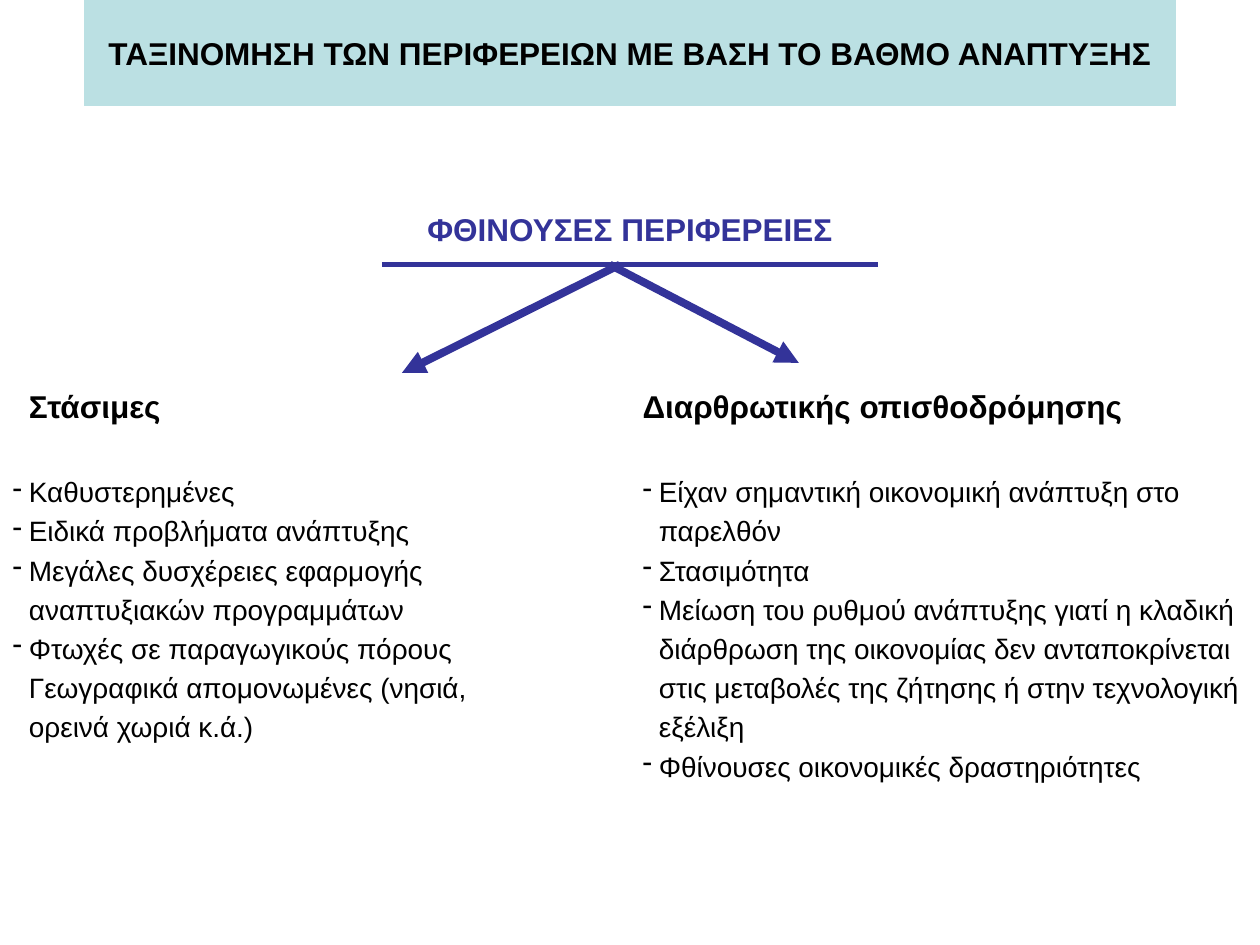
from dataclasses import dataclass

from pptx import Presentation
from pptx import util as u
from pptx.dml.color import RGBColor
from pptx.enum import shapes, text
from pptx.oxml.ns import qn
from lxml import etree

Inches, Pt = u.Inches, u.Pt


@dataclass(frozen=True)
class Theme:
    """Colours, font and type sizes of the slide."""
    font: str = "Arial"
    band: RGBColor = RGBColor(0xBB, 0xE0, 0xE3)
    accent: RGBColor = RGBColor(0x33, 0x33, 0x99)
    ink: RGBColor = RGBColor(0, 0, 0)
    heading: float = 18
    body: float = 16
    leading: float = 22.4
    rule: float = 3
    arrow: float = 4.5


T = Theme()
TITLE = "ΤΑΞΙΝΟΜΗΣΗ ΤΩΝ ΠΕΡΙΦΕΡΕΙΩΝ ΜΕ ΒΑΣΗ ΤΟ ΒΑΘΜΟ ΑΝΑΠΤΥΞΗΣ"
CATEGORY = "ΦΘΙΝΟΥΣΕΣ ΠΕΡΙΦΕΡΕΙΕΣ"
STAGNANT = [
    ("-", "Καθυστερημένες"),
    ("-", "Ειδικά προβλήματα ανάπτυξης"),
    ("-", "Μεγάλες δυσχέρειες εφαρμογής αναπτυξιακών προγραμμάτων"),
    ("-", "Φτωχές σε παραγωγικούς πόρους"),
    ("", "Γεωγραφικά απομονωμένες (νησιά, ορεινά χωριά κ.ά.)"),
]
DECLINING = [
    ("-", "Είχαν σημαντική οικονομική ανάπτυξη στο παρελθόν"),
    ("-", "Στασιμότητα"),
    ("-", "Μείωση του ρυθμού ανάπτυξης γιατί η κλαδική διάρθρωση της οικονομίας "
          "δεν ανταποκρίνεται στις μεταβολές της ζήτησης ή στην τεχνολογική εξέλιξη"),
    ("-", "Φθίνουσες οικονομικές δραστηριότητες"),
]


def add_run(p, words, size, color, bold=False):
    """Add one formatted run to a paragraph."""
    r = p.add_run()
    r.text = words
    r.font.name, r.font.size, r.font.bold = T.font, Pt(size), bold
    r.font.color.rgb = color


def set_indent(p, left, bullet=""):
    """Set the left margin and an optional hanging bullet."""
    pPr = p._p.get_or_add_pPr()
    pPr.set("marL", str(Inches(left)))
    pPr.set("indent", str(-Inches(left) if bullet else 0))
    if bullet:
        etree.SubElement(pPr, qn("a:buChar")).set("char", bullet)


def add_frame(s, box):
    """Add a wrapping text box without insets and return its text frame."""
    tf = s.shapes.add_textbox(*map(Inches, box)).text_frame
    tf.word_wrap = True
    tf.margin_left = tf.margin_right = tf.margin_top = tf.margin_bottom = 0
    return tf


def add_line(s, start, end, width, arrow=False):
    """Draw a straight accent line, with an arrowhead on request."""
    line = s.shapes.add_connector(shapes.MSO_CONNECTOR.STRAIGHT,
                                  *map(Inches, (*start, *end)))
    line.line.color.rgb, line.line.width = T.accent, Pt(width)
    if arrow:
        etree.SubElement(line.line._get_or_add_ln(), qn("a:tailEnd")).set("type", "triangle")
    etree.SubElement(line._element.spPr, qn("a:effectLst"))


def add_title(s, box):
    """Turn the title placeholder into the coloured band."""
    sp = s.shapes.title
    sp.left, sp.top, sp.width, sp.height = map(Inches, box)
    sp.fill.solid()
    sp.fill.fore_color.rgb = sp.line.color.rgb = T.band
    sp.line.width = Pt(0.75)
    tf = sp.text_frame
    tf.auto_size = text.MSO_AUTO_SIZE.NONE
    tf.vertical_anchor = text.MSO_ANCHOR.MIDDLE
    p = tf.paragraphs[0]
    p.alignment = text.PP_ALIGN.CENTER
    add_run(p, TITLE, T.heading, T.ink, True)


def add_category(s, box):
    """Place the category name over its rule and the two arrows."""
    left, top, width, height = box
    base = top + height
    tf = add_frame(s, box)
    tf.vertical_anchor = text.MSO_ANCHOR.MIDDLE
    p = tf.paragraphs[0]
    p.alignment = text.PP_ALIGN.CENTER
    add_run(p, CATEGORY, T.heading, T.accent, True)
    add_line(s, (left, base), (left + width, base), T.rule)
    add_line(s, (left + 1.89, base), (left + 0.16, base + 0.86), T.arrow, True)
    add_line(s, (left + 1.81, base), (left + 3.31, base + 0.78), T.arrow, True)


def add_column(s, box, heading, items, heading_indent=0):
    """Place a heading and its list of characteristics."""
    tf = add_frame(s, box)
    p = tf.paragraphs[0]
    set_indent(p, heading_indent)
    p.space_after = Pt(25.5)
    add_run(p, heading, T.heading, T.ink, True)
    for bullet, words in items:
        p = tf.add_paragraph()
        p.line_spacing = Pt(T.leading)
        set_indent(p, 0.13, bullet)
        add_run(p, words, T.body, T.ink)


def main():
    """Build and save the slide."""
    prs = Presentation()
    prs.slide_width, prs.slide_height = Inches(10), Inches(7.5)
    s = prs.slides.add_slide(prs.slide_layouts[5])
    add_title(s, (0.67, 0, 8.66, 0.84))
    add_category(s, (3.03, 1.54, 3.94, 0.56))
    add_column(s, (0.1, 3.07, 4, 3.3), "Στάσιμες", STAGNANT, 0.13)
    add_column(s, (5.1, 3.07, 4.8, 3.3), "Διαρθρωτικής οπισθοδρόμησης", DECLINING)
    prs.save("out.pptx")


if __name__ == "__main__":
    main()
